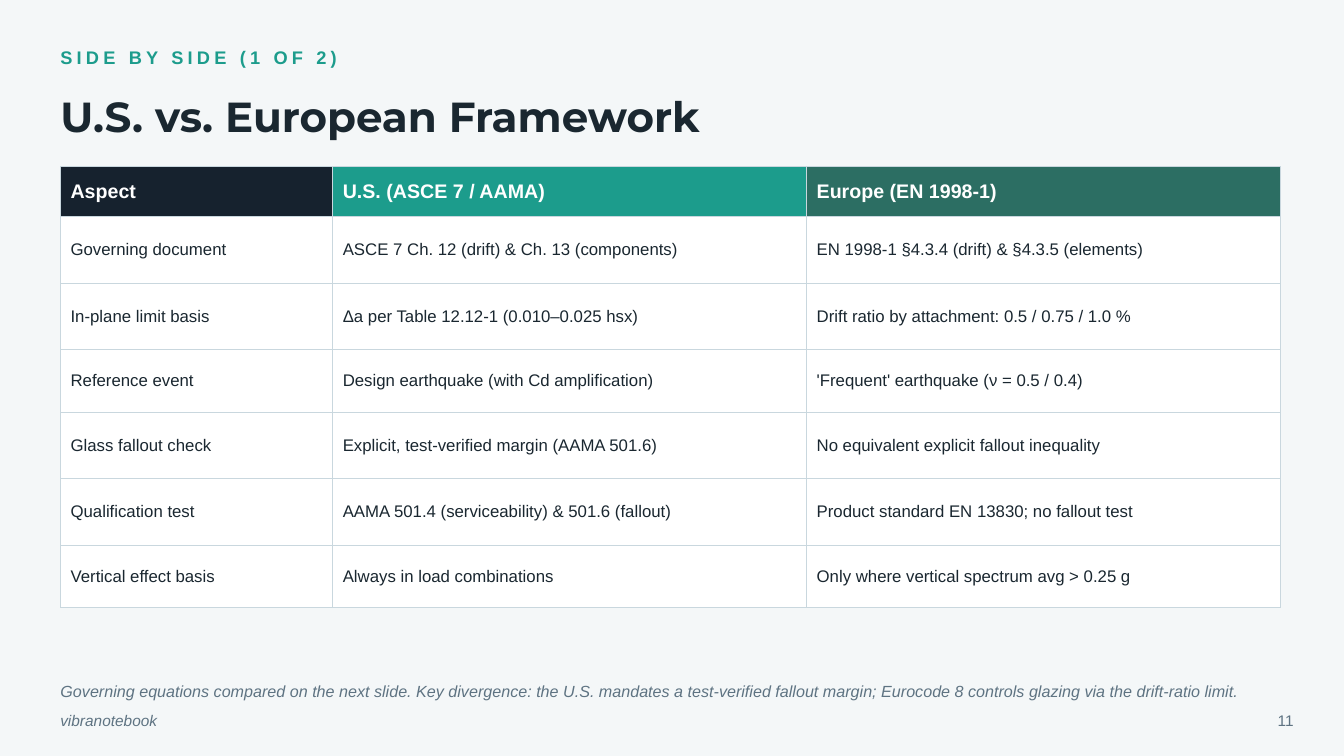
import dataclasses

import pptx
import pptx.dml.color
import pptx.enum.text
import pptx.oxml
import pptx.oxml.ns
import pptx.slide
import pptx.table
import pptx.text.text
import pptx.util

Inches = pptx.util.Inches
ALIGN = pptx.enum.text.PP_ALIGN
MIDDLE = pptx.enum.text.MSO_ANCHOR.MIDDLE


@dataclasses.dataclass(frozen=True)
class Theme:
    """Colours, fonts and type sizes of the slide."""
    back: str = "F4F7F8"
    ink: str = "1A2730"
    teal: str = "1C9C8C"
    navy: str = "16222E"
    green: str = "2C6E63"
    grey: str = "5E7382"
    rule: str = "C9D7DE"
    white: str = "FFFFFF"
    body: str = "Arial"
    display: str = "Montserrat"
    label: float = 13
    title: float = 30
    head: float = 14
    cell: float = 12
    note: float = 11.5
    foot: float = 11
    line: float = 0.5


THEME = Theme()


@dataclasses.dataclass(frozen=True)
class Style:
    size: float
    color: str
    font: str = THEME.body
    bold: bool = False
    slant: bool = False
    space: float = 0


@dataclasses.dataclass(frozen=True)
class Label:
    text: str
    left: float
    top: float
    width: float
    height: float
    style: Style
    inset: bool = False
    align: ALIGN = ALIGN.LEFT


FOOT = Style(THEME.foot, THEME.grey)
LABELS = [
    Label("SIDE BY SIDE (1 OF 2)", 0.6, 0.42, 11, 0.3,
          Style(THEME.label, THEME.teal, bold=True, space=3)),
    Label("U.S. vs. European Framework", 0.6, 0.72, 12.1, 0.85,
          Style(THEME.title, THEME.ink, THEME.display, bold=True)),
    Label("Governing equations compared on the next slide. Key divergence: "
          "the U.S. mandates a test-verified fallout margin; Eurocode 8 "
          "controls glazing via the drift-ratio limit.", 0.6, 6.68, 12.1, 0.35,
          Style(THEME.note, THEME.grey, slant=True)),
    Label("11", 12.43, 7, 0.5, 0.3, FOOT, inset=True, align=ALIGN.RIGHT),
    Label("vibranotebook", 0.5, 7, 3, 0.3,
          dataclasses.replace(FOOT, slant=True), inset=True),
]

WIDTHS = [2.7, 4.7, 4.7]
HEIGHTS = [0.5] + [0.66, 0.66, 0.62] * 2
FILLS = [THEME.navy, THEME.teal, THEME.green]
ROWS = [
    ("Aspect", "U.S. (ASCE 7 / AAMA)", "Europe (EN 1998-1)"),
    ("Governing document", "ASCE 7 Ch. 12 (drift) & Ch. 13 (components)",
     "EN 1998-1 §4.3.4 (drift) & §4.3.5 (elements)"),
    ("In-plane limit basis", "Δa per Table 12.12-1 (0.010–0.025 hsx)",
     "Drift ratio by attachment: 0.5 / 0.75 / 1.0 %"),
    ("Reference event", "Design earthquake (with Cd amplification)",
     "'Frequent' earthquake (ν = 0.5 / 0.4)"),
    ("Glass fallout check", "Explicit, test-verified margin (AAMA 501.6)",
     "No equivalent explicit fallout inequality"),
    ("Qualification test", "AAMA 501.4 (serviceability) & 501.6 (fallout)",
     "Product standard EN 13830; no fallout test"),
    ("Vertical effect basis", "Always in load combinations",
     "Only where vertical spectrum avg > 0.25 g"),
]


def tint(code: str) -> pptx.dml.color.RGBColor:
    return pptx.dml.color.RGBColor.from_string(code)


def dress(frame: pptx.text.text.TextFrame, style: Style) -> None:
    """Format every run in a text frame."""
    for para in frame.paragraphs:
        for run in para.runs:
            run.font.name = style.font
            run.font.size = pptx.util.Pt(style.size)
            run.font.bold = style.bold
            run.font.italic = style.slant
            run.font.color.rgb = tint(style.color)
            if style.space:
                run._r.get_or_add_rPr().set("spc", str(int(style.space * 100)))


def add_label(slide: pptx.slide.Slide, label: Label) -> None:
    box = slide.shapes.add_textbox(Inches(label.left), Inches(label.top),
                                   Inches(label.width), Inches(label.height))
    frame = box.text_frame
    frame.word_wrap = True
    frame.vertical_anchor = MIDDLE
    if not label.inset:
        frame.margin_left = frame.margin_right = 0
        frame.margin_top = frame.margin_bottom = 0
    frame.text = label.text
    frame.paragraphs[0].alignment = label.align
    dress(frame, label.style)


def add_edges(cell: pptx.table._Cell) -> None:
    """Rule all four sides; borders must come before the cell fill."""
    props = cell._tc.get_or_add_tcPr()
    width = pptx.util.Pt(THEME.line)
    for place, side in enumerate(("lnL", "lnR", "lnT", "lnB")):
        props.insert(place, pptx.oxml.parse_xml(
            f'<a:{side} {pptx.oxml.ns.nsdecls("a")} w="{width}"><a:solidFill>'
            f'<a:srgbClr val="{THEME.rule}"/></a:solidFill></a:{side}>'))


def add_grid(slide: pptx.slide.Slide) -> None:
    grid = slide.shapes.add_table(
        len(ROWS), len(WIDTHS), Inches(0.6), Inches(1.65),
        Inches(sum(WIDTHS)), Inches(sum(HEIGHTS))).table
    grid.horz_banding = False
    for column, width in zip(grid.columns, WIDTHS):
        column.width = Inches(width)
    for row, height in zip(grid.rows, HEIGHTS):
        row.height = Inches(height)

    head = Style(THEME.head, THEME.white, bold=True)
    body = Style(THEME.cell, THEME.ink)
    for r, texts in enumerate(ROWS):
        for c, text in enumerate(texts):
            cell = grid.cell(r, c)
            cell.text_frame.text = text
            cell.vertical_anchor = MIDDLE
            cell.fill.solid()
            cell.fill.fore_color.rgb = tint(THEME.white if r else FILLS[c])
            dress(cell.text_frame, body if r else head)
            add_edges(cell)


def main() -> None:
    deck = pptx.Presentation()
    deck.slide_width, deck.slide_height = Inches(13.33), Inches(7.5)
    slide = deck.slides.add_slide(deck.slide_layouts[6])
    slide.background.fill.solid()
    slide.background.fill.fore_color.rgb = tint(THEME.back)

    # Heading, table, then note and footer
    for label in LABELS[:2]:
        add_label(slide, label)
    add_grid(slide)
    for label in LABELS[2:]:
        add_label(slide, label)
    deck.save("out.pptx")


if __name__ == "__main__":
    main()
